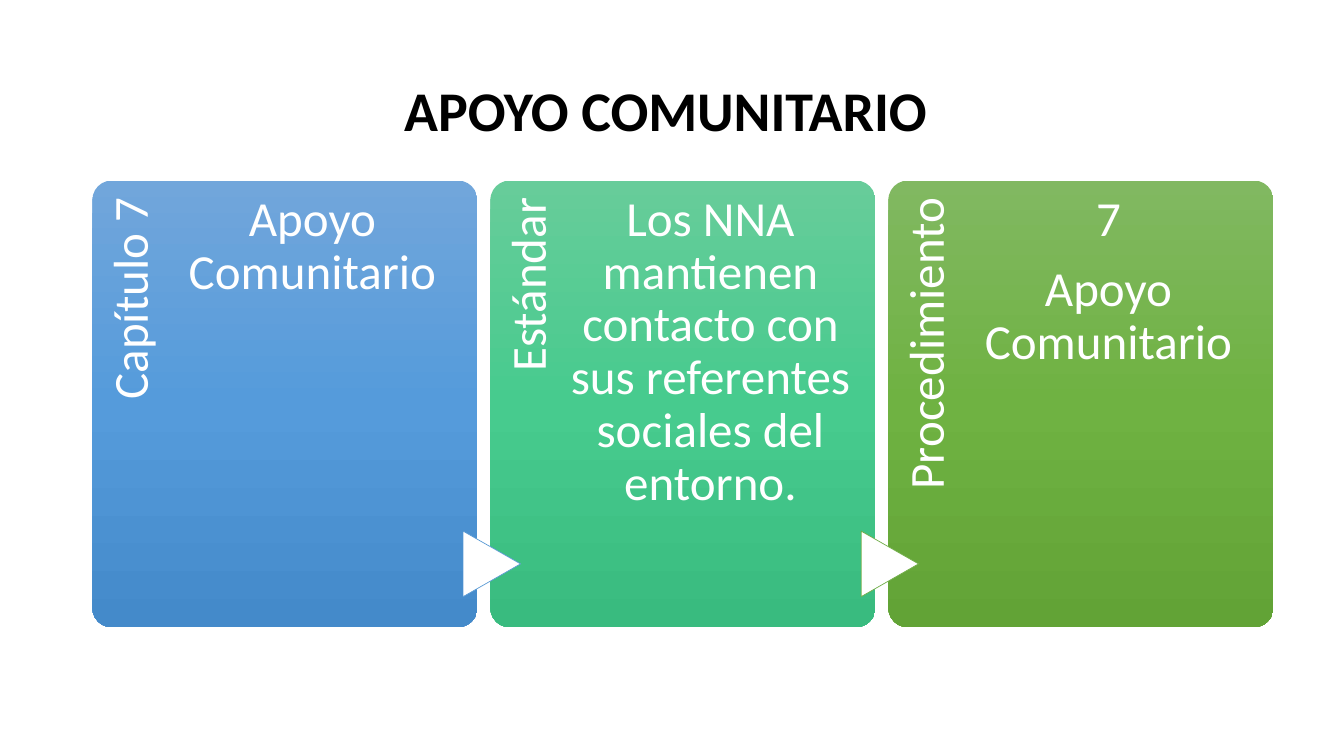
"""Builds the APOYO COMUNITARIO slide: three gradient panels joined by arrows."""
from copy import deepcopy

from pptx import Presentation
from pptx.dml.color import RGBColor
from pptx.enum.shapes import MSO_SHAPE as SHAPE
from pptx.enum.text import MSO_ANCHOR as ANCHOR, PP_ALIGN as ALIGN
from pptx.oxml.ns import qn
from pptx.util import Pt

TITLE = "APOYO COMUNITARIO "
PANELS = [
    ("Capítulo 7", ["Apoyo Comunitario"], "blue"),
    ("Estándar", ["Los NNA mantienen contacto con sus referentes sociales del entorno."], "teal"),
    ("Procedimiento", ["7", "Apoyo Comunitario"], "green"),
]
ARROWS = ["blue_line", "green_line"]
COLORS = {
    "black": "000000", "white": "FFFFFF",
    "blue_line": "5B9BD5", "green_line": "70AD47",
}
GRADIENTS = {
    "blue": ["71A6DB", "559BDB", "448ACA"],
    "teal": ["67CC9A", "47CB8E", "39BB7F"],
    "green": ["81B861", "6FB242", "62A336"],
}
FONT = "Calibri"
LEFT, TOP, WIDTH, HEIGHT, PITCH = 66, 129, 275, 319, 284.3
SPINE_W, SPINE_H = 261.5, 54.7
BODY_DX, BODY_W = 55, 204.5
ARROW_W, ARROW_H, ARROW_Y = 46.8, 41, 402.8


def rgb(code):
    return RGBColor.from_string(code)


def style(p, size, color, align, bold=False):
    p.alignment = align
    p.line_spacing = 0.9
    f = p.font
    f.name, f.size, f.bold = FONT, Pt(size), bold
    f.color.rgb = rgb(COLORS[color])


def centred(cx, cy, w, h):
    return Pt(cx - w / 2), Pt(cy - h / 2), Pt(w), Pt(h)


def add_panel(s, x, codes):
    sp = s.shapes.add_shape(SHAPE.ROUNDED_RECTANGLE, Pt(x), Pt(TOP), Pt(WIDTH), Pt(HEIGHT))
    sp.adjustments[0] = 0.05
    sp.shadow.inherit = False
    sp.line.fill.background()
    sp.fill.gradient()
    sp.fill.gradient_angle = 270
    stops = sp._element.spPr.find(".//" + qn("a:gsLst"))
    stops.append(deepcopy(stops[-1]))
    for i, (stop, code) in enumerate(zip(sp.fill.gradient_stops, codes)):
        stop.position = i / 2
        stop.color.rgb = rgb(code)


def add_text(s, box, lines, align, right=0, rotation=0):
    sp = s.shapes.add_textbox(*box)
    sp.rotation = rotation
    tf = sp.text_frame
    tf.word_wrap = True
    tf.vertical_anchor = ANCHOR.TOP
    tf.margin_left = tf.margin_bottom = 0
    tf.margin_top, tf.margin_right = Pt(9.4), Pt(right)
    tf.text = "\n".join(lines)
    for p in tf.paragraphs:
        style(p, 35, "white", align)
        p.space_after = Pt(12.25)


def add_arrow(s, x, line):
    sp = s.shapes.add_shape(SHAPE.FLOWCHART_EXTRACT, *centred(x + 1, ARROW_Y, ARROW_W, ARROW_H))
    sp.rotation = 90
    sp.shadow.inherit = False
    sp.fill.solid()
    sp.fill.fore_color.rgb = rgb(COLORS["white"])
    sp.line.color.rgb = rgb(COLORS[line])
    sp.line.width = Pt(0.5)


def main():
    prs = Presentation()
    prs.slide_width, prs.slide_height = Pt(960), Pt(540)
    s = prs.slides.add_slide(prs.slide_layouts[5])

    title = s.shapes.title
    title.left, title.top, title.width, title.height = Pt(66), Pt(28.8), Pt(828), Pt(104.4)
    title.text_frame.text = TITLE
    title.text_frame.vertical_anchor = ANCHOR.MIDDLE
    style(title.text_frame.paragraphs[0], 40, "black", ALIGN.CENTER, True)

    for i, (spine, body, gradient) in enumerate(PANELS):
        x = LEFT + i * PITCH
        add_panel(s, x, GRADIENTS[gradient])
        spine_box = centred(x + SPINE_H / 2, TOP + SPINE_W / 2, SPINE_W, SPINE_H)
        add_text(s, spine_box, [spine], ALIGN.RIGHT, 12.2, 270)
        if i:
            add_arrow(s, x, ARROWS[i - 1])
        add_text(s, (Pt(x + BODY_DX), Pt(TOP), Pt(BODY_W), Pt(HEIGHT)), body, ALIGN.CENTER)

    prs.save("out.pptx")


if __name__ == "__main__":
    main()
